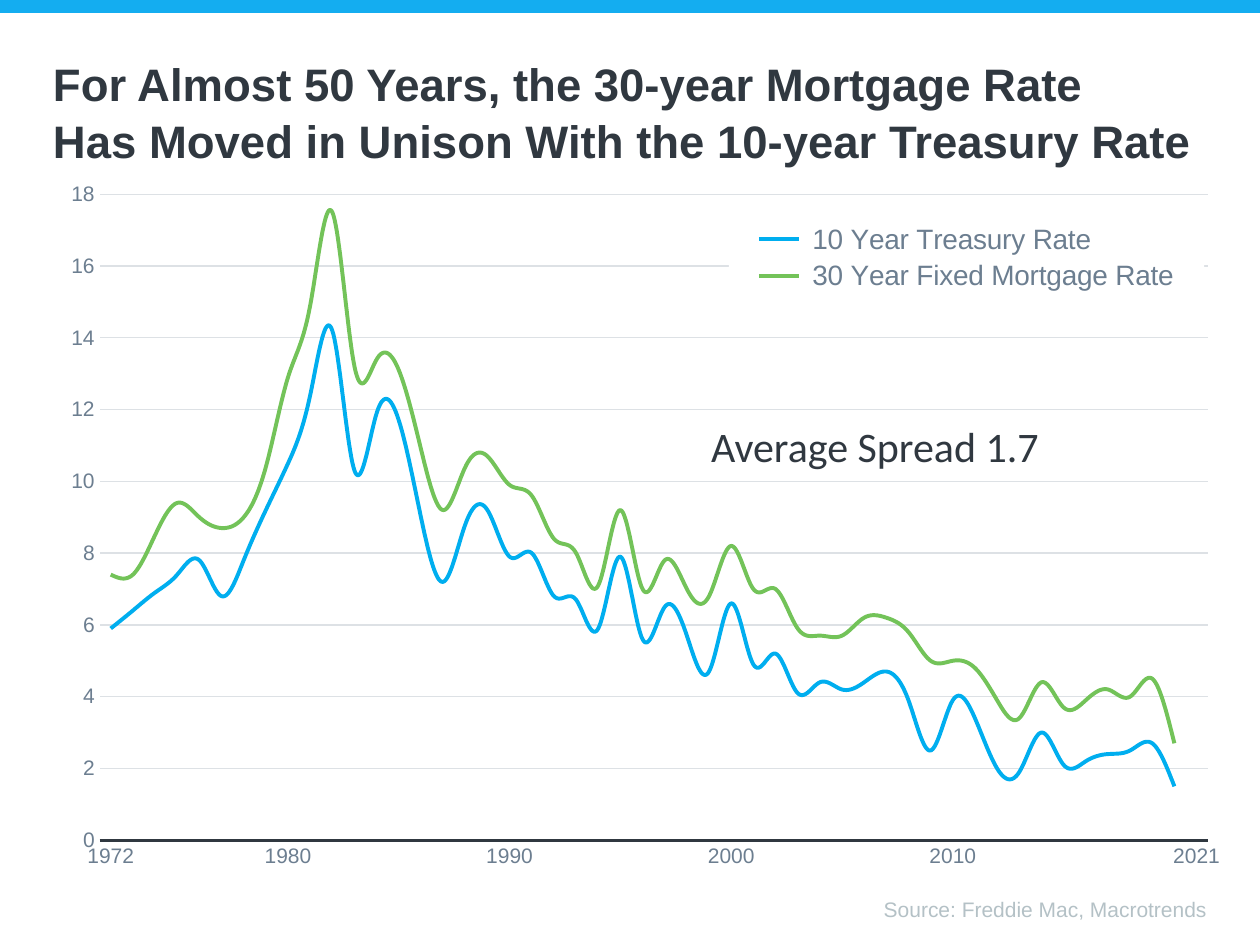
from lxml.etree import SubElement
from pptx import Presentation
from pptx.chart.data import CategoryChartData
from pptx.dml.color import RGBColor
from pptx.enum.chart import XL_CHART_TYPE, XL_LEGEND_POSITION, XL_TICK_MARK
from pptx.enum.shapes import MSO_SHAPE
from pptx.enum.text import PP_ALIGN
from pptx.oxml import parse_xml
from pptx.oxml.ns import nsdecls, qn
from pptx.util import Emu, Pt

WHITE = RGBColor(0xFF, 0xFF, 0xFF)
INK = RGBColor(0x30, 0x38, 0x40)
SLATE = RGBColor(0x6C, 0x7E, 0x90)
MIST = RGBColor(0xB4, 0xC1, 0xC6)
GRID = RGBColor(0xDD, 0xE1, 0xE5)
BAR = RGBColor(0x14, 0xAD, 0xF0)
BLUE = RGBColor(0x00, 0xAE, 0xEF)
GREEN = RGBColor(0x73, 0xC3, 0x59)

FIRST_YEAR, LAST_YEAR = 1972, 2021
LABELLED_YEARS = {FIRST_YEAR, 1980, 1990, 2000, 2010, LAST_YEAR}
TREASURY = [
    5.9, 6.4, 6.9, 7.4, 7.8, 6.8, 7.8, 9.2, 10.5, 12.4, 14.2, 10.3, 11.9,
    11.7, 9, 7.2, 8.8, 9.2, 7.9, 8, 6.8, 6.7, 5.9, 7.9, 5.6, 6.5, 5.7, 4.7,
    6.6, 4.9, 5.2, 4.1, 4.4, 4.2, 4.4, 4.7, 3.9, 2.5, 3.9, 3.4, 2, 1.9, 3,
    2.1, 2.2, 2.4, 2.5, 2.7, 1.5, None,
]
MORTGAGE = [
    7.4, 7.4, 8.5, 9.4, 9, 8.7, 9, 10.4, 12.9, 14.9, 17.5, 13.2, 13.4, 13.1,
    10.9, 9.2, 10.4, 10.7, 9.9, 9.6, 8.4, 8, 7.1, 9.2, 7, 7.8, 7, 6.8, 8.2,
    7, 7, 5.9, 5.7, 5.7, 6.2, 6.2, 5.8, 5, 5, 4.8, 3.9, 3.4, 4.4, 3.7, 3.9,
    4.2, 4, 4.5, 2.7, None,
]
RATES = [
    (" 10 Year Treasury Rate", TREASURY, BLUE),
    (" 30 Year Fixed Mortgage Rate", MORTGAGE, GREEN),
]


def px(length):
    return Emu(round(length * 914400 / 126))


def set_font(font, size, color, name="Arial", bold=False):
    font.size, font.name, font.bold = Pt(size), name, bold
    font.color.rgb = color


def manual_layout(x, y, width, height, inner=False):
    layout = parse_xml(f"<c:layout {nsdecls('c')}/>")
    manual = SubElement(layout, qn("c:manualLayout"))
    settings = {"layoutTarget": "inner"} if inner else {}
    settings |= {"xMode": "edge", "yMode": "edge", "x": x, "y": y, "w": width, "h": height}
    for key, value in settings.items():
        SubElement(manual, qn(f"c:{key}")).set("val", str(value))
    return layout


class SlideBuilder:
    def __init__(self, page):
        self.page = page

    def bar(self, x, y, width, height, color):
        bar = self.page.shapes.add_shape(
            MSO_SHAPE.RECTANGLE, px(x), px(y), px(width), px(height))
        bar.shadow.inherit = False
        bar.fill.solid()
        bar.fill.fore_color.rgb = color
        bar.line.fill.background()

    def text(self, x, y, width, height, lines, size, color, name="Arial",
             bold=False, align=PP_ALIGN.LEFT, spacing=1.0, inset=(0, 0), wrap=True):
        box = self.page.shapes.add_textbox(px(x), px(y), px(width), px(height))
        frame = box.text_frame
        frame.word_wrap = wrap
        frame.margin_left = frame.margin_right = px(inset[0])
        frame.margin_top = frame.margin_bottom = px(inset[1])
        para = frame.paragraphs[0]
        para.alignment, para.line_spacing = align, spacing
        for index, line in enumerate(lines):
            if index:
                para.add_line_break()
            para.add_run().text = line
        set_font(para.font, size, color, name, bold)

    def line_chart(self, x, y, width, height, categories, rates):
        data = CategoryChartData()
        data.categories = categories
        for name, values, _ in rates:
            data.add_series(name, values)
        chart = self.page.shapes.add_chart(
            XL_CHART_TYPE.LINE, px(x), px(y), px(width), px(height), data).chart
        chart.has_title = False
        set_font(chart.font, 10, INK)
        chart.plots[0].vary_by_categories = False
        for series, (_, _, color) in zip(chart.plots[0].series, rates):
            series.smooth = True
            series.format.line.color.rgb = color
            series.format.line.width = Pt(2.25)
        plot_area = chart.plots[0]._element.getparent()
        for layout in plot_area.findall(qn("c:layout")):
            plot_area.remove(layout)
        plot_area.insert(0, manual_layout(0.059, 0.027, 0.912, 0.901, inner=True))
        self.axes(chart)
        self.legend(chart)

    def axes(self, chart):
        years, rates = chart.category_axis, chart.value_axis
        for axis in (years, rates):
            axis.major_tick_mark = axis.minor_tick_mark = XL_TICK_MARK.NONE
            set_font(axis.tick_labels.font, 12, SLATE)
        years.format.line.color.rgb = INK
        years.format.line.width = Pt(1.5)
        body = years._element.find(qn("c:txPr")).find(qn("a:bodyPr"))
        body.set("rot", "-60000000")
        body.set("vert", "horz")
        skip = parse_xml(f'<c:tickLblSkip {nsdecls("c")} val="1"/>')
        years._element.find(qn("c:noMultiLvlLbl")).addprevious(skip)
        rates.minimum_scale, rates.maximum_scale, rates.major_unit = 0, 18, 2
        rates.format.line.fill.background()
        rates.has_major_gridlines = True
        rates.major_gridlines.format.line.color.rgb = GRID
        rates.major_gridlines.format.line.width = Pt(0.75)

    def legend(self, chart):
        chart.has_legend = True
        legend = chart.legend
        legend.position = XL_LEGEND_POSITION.BOTTOM
        legend.include_in_layout = False
        set_font(legend.font, 16, SLATE)
        element = legend._element
        for layout in element.findall(qn("c:layout")):
            element.remove(layout)
        element.find(qn("c:legendPos")).addnext(manual_layout(0.577, 0.06, 0.391, 0.11))
        fill = parse_xml(
            f'<c:spPr {nsdecls("c", "a")}><a:solidFill><a:srgbClr val="{WHITE}"/>'
            '</a:solidFill></c:spPr>')
        element.find(qn("c:txPr")).addprevious(fill)


def main():
    deck = Presentation()
    deck.slide_width, deck.slide_height = px(1260), px(945)
    builder = SlideBuilder(deck.slides.add_slide(deck.slide_layouts[6]))
    builder.bar(0, 0, 1260, 13, BAR)
    builder.text(53, 893, 1154, 30, ["Source: Freddie Mac, Macrotrends"], 12, MIST,
                 align=PP_ALIGN.RIGHT, spacing=0.9, inset=(0, 6))
    builder.text(53, 53, 1155, 110,
                 ["For Almost 50 Years, the 30-year Mortgage Rate",
                  "Has Moved in Unison With the 10-year Treasury Rate"],
                 26, INK, bold=True, spacing=1.05)
    years = [str(year) if year in LABELLED_YEARS else ""
             for year in range(FIRST_YEAR, LAST_YEAR + 1)]
    builder.line_chart(28, 175, 1215, 717, years, RATES)
    builder.text(698, 415, 357, 63, ["Average Spread 1.7"], 24, INK, name="Calibri",
                 inset=(13, 6), wrap=False)
    deck.save("out.pptx")


if __name__ == "__main__":
    main()
